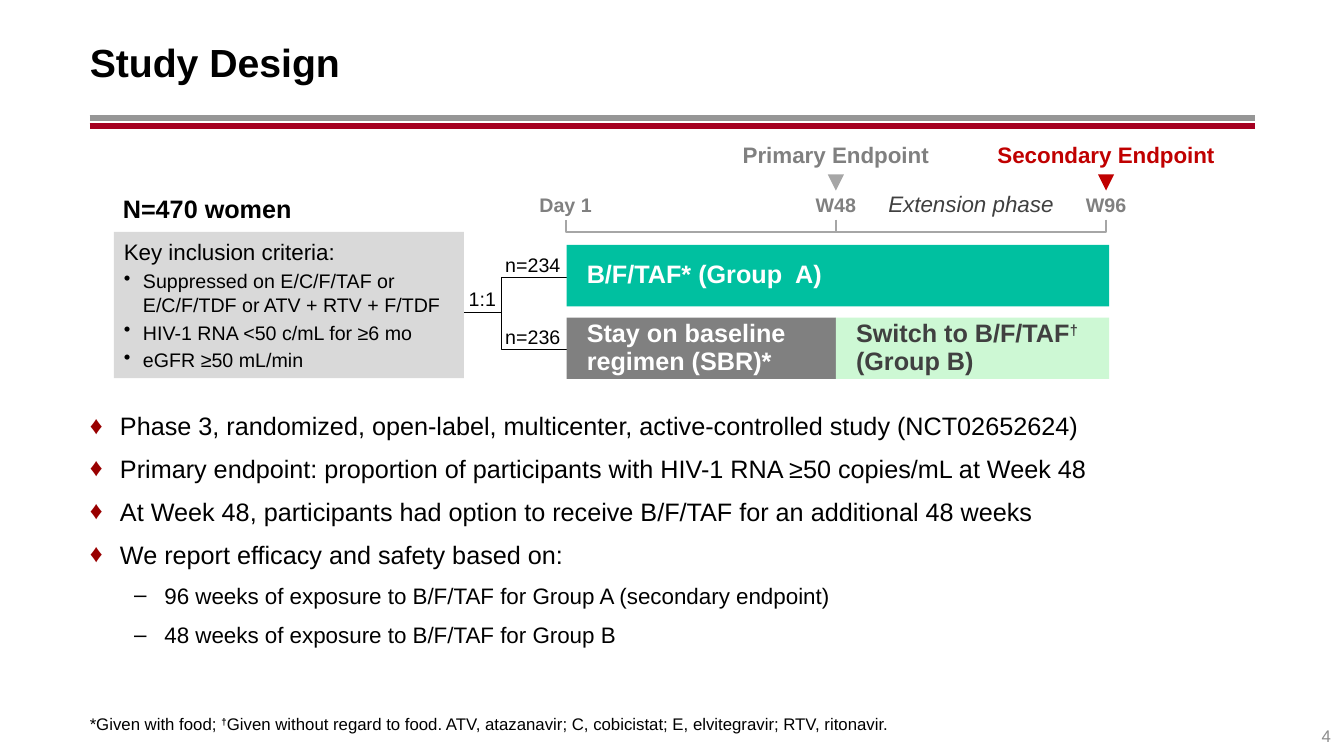
import pptx
import pptx.util
import pptx.dml.color
import pptx.enum.shapes
import pptx.enum.text
import pptx.oxml
import pptx.oxml.ns
from dataclasses import dataclass

PX = 9144
SHAPE = pptx.enum.shapes.MSO_SHAPE
ALIGN = pptx.enum.text.PP_ALIGN
ANCHOR = pptx.enum.text.MSO_ANCHOR


@dataclass(frozen=True)
class Theme:
    """Colours, font and type sizes of the deck."""
    font: str = "Arial"
    black: str = "000000"
    white: str = "FFFFFF"
    rule: str = "969696"
    wine: str = "A50021"
    bullet: str = "990000"
    red: str = "C00000"
    gray: str = "808080"
    axis: str = "A6A6A6"
    panel: str = "D9D9D9"
    teal: str = "00C0A0"
    mint: str = "CDF8D4"
    dark: str = "404040"
    page: str = "8C8C8C"
    title: int = 28
    large: int = 18
    mid: int = 16
    small: int = 14
    note: int = 12


T = Theme()


def rgb(color):
    """Turn a hex string into a colour."""
    return pptx.dml.color.RGBColor.from_string(color)


def px(*nums):
    """Turn px lengths into EMU."""
    return [round(num * PX) for num in nums]


def style(par, size, color, bold=False, italic=False):
    """Format every run of a paragraph."""
    for run in par.runs:
        font = run.font
        font.name, font.size = T.font, pptx.util.Pt(size)
        font.bold, font.italic = bold, italic
        font.color.rgb = rgb(color)


def raise_run(run):
    """Make a run superscript."""
    run.font._element.set("baseline", "30000")


def setup(frame, inset=(10, 5, 10, 5), anchor=ANCHOR.TOP, wrap=True):
    """Set the margins, anchor and wrapping of a text frame."""
    (frame.margin_left, frame.margin_top,
     frame.margin_right, frame.margin_bottom) = px(*inset)
    frame.vertical_anchor, frame.word_wrap = anchor, wrap
    frame.auto_size = pptx.enum.text.MSO_AUTO_SIZE.NONE


def bullet(par, char, left, hang, color=None):
    """Give a paragraph a hanging bullet, or none if char is empty."""
    props = par._p.get_or_add_pPr()
    left, hang = px(left, hang)
    props.set("marL", str(left))
    props.set("indent", str(-hang))
    space = pptx.oxml.ns.nsdecls("a")
    if color:
        props.append(pptx.oxml.parse_xml(
            f'<a:buClr {space}><a:srgbClr val="{color}"/></a:buClr>'))
    mark = f'<a:buChar {space} char="{char}"/>' if char else f"<a:buNone {space}/>"
    props.append(pptx.oxml.parse_xml(mark))


def move(shape, box):
    """Place a shape in a px box."""
    shape.left, shape.top, shape.width, shape.height = px(*box)
    return shape


def block(slide, kind, box, fill=None, line=None):
    """Draw a flat preset shape."""
    shape = slide.shapes.add_shape(kind, *px(*box))
    shape.shadow.inherit = False
    if fill:
        shape.fill.solid()
        shape.fill.fore_color.rgb = rgb(fill)
    else:
        shape.fill.background()
    if line:
        shape.line.color.rgb, shape.line.width = rgb(line), pptx.util.Pt(0.75)
    else:
        shape.line.fill.background()
    return shape


def rule(slide, start, end, color, width):
    """Draw a straight line."""
    line = slide.shapes.add_connector(
        pptx.enum.shapes.MSO_CONNECTOR.STRAIGHT, *px(*start, *end))
    line.line.color.rgb, line.line.width = rgb(color), pptx.util.Pt(width)
    line._element.spPr.append(pptx.oxml.parse_xml(
        f'<a:effectLst {pptx.oxml.ns.nsdecls("a")}/>'))


def label(slide, box, text, size, color, bold=False, italic=False, fill=None):
    """Write one centred line in a box without margins."""
    shape = block(slide, SHAPE.RECTANGLE, box, fill) if fill else slide.shapes.add_textbox(*px(*box))
    setup(shape.text_frame, (0, 0, 0, 0), ANCHOR.MIDDLE, False)
    par = shape.text_frame.paragraphs[0]
    par.text, par.alignment = text, ALIGN.CENTER
    style(par, size, color, bold, italic)


def header(slide, box):
    """Set the title over its two rules."""
    x, y, w, h = box
    for gap, color in ((13, T.rule), (21, T.wine)):
        rule(slide, (x, y + h + gap), (x + w, y + h + gap), color, 4.25)
    frame = move(slide.shapes.title, box).text_frame
    frame.text = "Study Design"
    setup(frame, (0, 5, 0, 5), ANCHOR.MIDDLE)
    frame.paragraphs[0].alignment = ALIGN.LEFT
    style(frame.paragraphs[0], T.title, T.black, True)


def split(slide, box):
    """Draw the randomisation fork with its counts."""
    x, y, w, h = box
    fork = 91
    label(slide, (x + 59, y + 9, 27, 24), "1:1", T.small, T.black, fill=T.white)
    for text, base in (("n=234", y), ("n=236", y + h - 1)):
        label(slide, (x + fork + 4, base - 24, 55, 24), text, T.small, T.black, fill=T.white)
    brace = block(slide, SHAPE.LEFT_BRACKET, (x + fork, y, w - fork, h), line=T.black)
    brace.adjustments[0] = 0
    rule(slide, (x, y + h // 2 - 1), (x + fork, y + h // 2 - 1), T.black, 0.75)


def entry(slide, box):
    """Show the sample size over the inclusion criteria."""
    x, y, w, h = box
    head = slide.shapes.add_textbox(*px(x - 1, y - 43, w - 35, 40)).text_frame
    head.text = "N=470 women"
    setup(head)
    style(head.paragraphs[0], T.large, T.black, True)
    panel = block(slide, SHAPE.PENTAGON, box, T.panel)
    panel.adjustments[0] = 0
    frame = panel.text_frame
    frame.text = ("Key inclusion criteria:\n"
                  "Suppressed on E/C/F/TAF or E/C/F/TDF or ATV + RTV + F/TDF\n"
                  "HIV-1 RNA <50 c/mL for ≥6 mo\n"
                  "eGFR ≥50 mL/min")
    setup(frame, anchor=ANCHOR.MIDDLE)
    for row, par in enumerate(frame.paragraphs):
        par.alignment = ALIGN.LEFT
        style(par, T.small if row else T.mid, T.black)
        if row:
            par.space_before = pptx.util.Pt(3)
            bullet(par, "•", 19, 19)


def arms(slide, box):
    """Draw the bars of the two study groups."""
    x, y, w, h = box
    tall, half = 61, 267
    low = y + h - tall
    bars = (
        ((x, y, w, tall), T.teal, T.white, ["B/F/TAF* (Group  A)"]),
        ((x, low, half, tall), T.gray, T.white, ["Stay on baseline regimen (SBR)*"]),
        ((x + half, low, w - half, tall), T.mint, T.dark,
         ["Switch to B/F/TAF", "†", "\v", "(Group B)"]),
    )
    for place, fill, color, parts in bars:
        frame = block(slide, SHAPE.RECTANGLE, place, fill).text_frame
        setup(frame, (20, 0, 10, 0), ANCHOR.MIDDLE)
        par = frame.paragraphs[0]
        par.alignment, par.line_spacing = ALIGN.LEFT, 0.9
        for part in parts:
            if part == "\v":
                par.add_line_break()
                continue
            run = par.add_run()
            run.text = part
            if part == "†":
                raise_run(run)
        style(par, T.large, color, True)


def axis(slide, box):
    """Draw the visit axis with its endpoints above."""
    x, y, w, h = box
    step, base = w // 2, y + h
    for turn, visit in enumerate(("Day 1", "W48", "W96")):
        mid = x + turn * step
        label(slide, (mid - 26, y + 56, 52, 24), visit, T.small, T.gray, True)
        if turn:
            pen = slide.shapes.build_freeform(mid, base - 12, scale=PX)
            pen.add_line_segments(
                [(mid, base), (mid - step, base), (mid - step, base - 12)], close=False)
            span = pen.convert_to_shape()
            span.shadow.inherit = False
            span.fill.background()
            span.line.color.rgb, span.line.width = rgb(T.axis), pptx.util.Pt(1.5)
    ends = (("Primary Endpoint", T.gray, T.axis), ("Secondary Endpoint", T.red, T.red))
    for turn, (text, color, fill) in enumerate(ends, 1):
        mid = x + turn * step
        label(slide, (mid - 109, y, 218, 37), text, T.mid, color, True)
        block(slide, SHAPE.ISOSCELES_TRIANGLE, (mid - 8, y + 38, 16, 16), fill).rotation = 180
    label(slide, (x + step * 3 // 2 - 95, y + 55, 190, 24), "Extension phase",
          T.mid, T.dark, italic=True)


def points(slide, box):
    """Fill the list of design points."""
    frame = move(slide.placeholders[1], box).text_frame
    frame.text = (
        "Phase 3, randomized, open-label, multicenter, active-controlled study (NCT02652624)\n"
        "Primary endpoint: proportion of participants with HIV-1 RNA ≥50 copies/mL at Week 48\n"
        "At Week 48, participants had option to receive B/F/TAF for an additional 48 weeks\n"
        "We report efficacy and safety based on:\n"
        "96 weeks of exposure to B/F/TAF for Group A (secondary endpoint)\n"
        "48 weeks of exposure to B/F/TAF for Group B")
    setup(frame, (0, 5, 0, 5))
    for row, par in enumerate(frame.paragraphs):
        par.space_before, par.space_after = pptx.util.Pt(6), pptx.util.Pt(3)
        if row < 4:
            bullet(par, "♦", 30, 30, T.bullet)
            style(par, T.large, T.black)
        else:
            par.level = 1
            bullet(par, "–", 74, 30)
            style(par, T.mid, T.black)


def footer(slide, box):
    """Set the footnote and the page number."""
    x, y, w, h = box
    frame = move(slide.placeholders[2], box).text_frame
    setup(frame, (0, 5, 0, 5), ANCHOR.BOTTOM)
    par = frame.paragraphs[0]
    par.text, par.space_before = "*Given with food; ", pptx.util.Pt(0)
    dagger, rest = par.add_run(), par.add_run()
    dagger.text = "†"
    rest.text = ("Given without regard to food. ATV, atazanavir; C, cobicistat; "
                 "E, elvitegravir; RTV, ritonavir.")
    bullet(par, "", 0, 0)
    style(par, T.note, T.black)
    dagger.font.bold = True
    raise_run(dagger)
    page = slide.shapes.add_textbox(*px(x + w, y + 27, 85, 40)).text_frame
    page.text = "4"
    setup(page, anchor=ANCHOR.MIDDLE)
    page.paragraphs[0].alignment = ALIGN.RIGHT
    style(page.paragraphs[0], T.note, T.page)


def main():
    """Build the study design slide."""
    deck = pptx.Presentation()
    deck.slide_width, deck.slide_height = px(1333, 750)
    slide = deck.slides.add_slide(deck.slide_layouts[3])
    header(slide, (89, 18, 1156, 86))
    split(slide, (406, 275, 165, 72))
    entry(slide, (113, 230, 347, 145))
    arms(slide, (562, 243, 538, 133))
    axis(slide, (561, 135, 536, 95))
    points(slide, (89, 402, 1156, 286))
    footer(slide, (89, 683, 1156, 50))
    deck.save("out.pptx")


if __name__ == "__main__":
    main()
